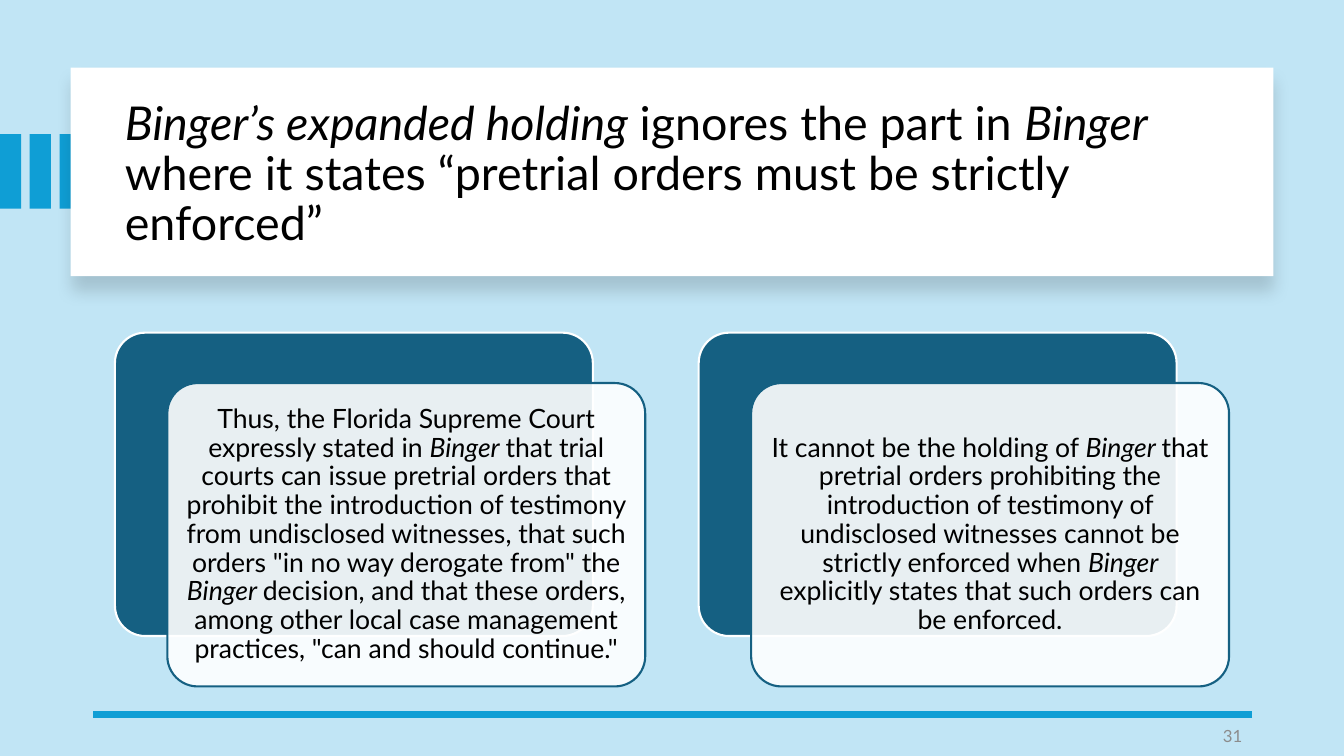
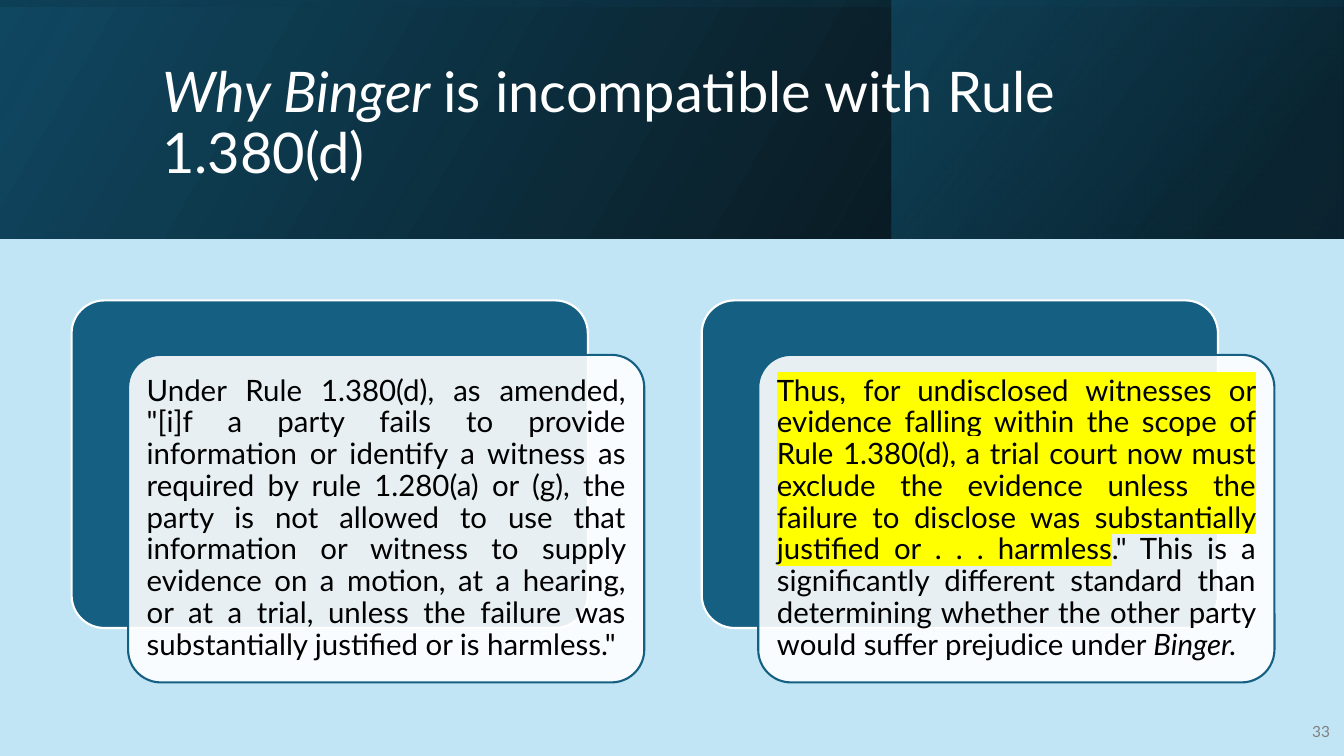
from lxml import etree
from pptx import Presentation
from pptx.dml.color import RGBColor
from pptx.enum.shapes import MSO_CONNECTOR, MSO_SHAPE
from pptx.enum.text import MSO_ANCHOR, PP_ALIGN
from pptx.oxml.ns import qn
from pptx.util import Inches, Pt

# Shared look
FONT = "Lato"
SKY, BLUE, TEAL = "C1E5F5", "0F9ED5", "156082"
WHITE, BLACK, YELLOW = "FFFFFF", "000000", "FFFF00"
ITALIC = {"italic": True}
MARKED = {"highlight": YELLOW}

# Content: text is a list of (words, format) runs; boxes are left, top, width, height
STRICT_ORDERS = {
    "title": [
        ("Binger’s expanded holding ", ITALIC),
        ("ignores the part in ", {}),
        ("Binger ", ITALIC),
        ("where it states “pretrial orders must be strictly enforced”", {}),
    ],
    "title_box": (1.14, 0.89, 11.13, 1.7),
    "title_style": {"size": 33.3, "color": BLACK},
    "number": "31",
    "number_box": (9.42, 7.1, 3, 0.4),
    "number_style": {"size": 12, "color": "8C8C8C"},
    "cards": [
        [
            ("Thus, the Florida Supreme Court expressly stated in ", {}),
            ("Binger ", ITALIC),
            ("that trial courts can issue pretrial orders that prohibit the "
             "introduction of testimony from undisclosed witnesses, that such "
             'orders "in no way derogate from" the ', {}),
            ("Binger ", ITALIC),
            ("decision, and that these orders, among other local case management "
             'practices, "can and should continue."', {}),
        ],
        [
            ("It cannot be the holding of ", {}),
            ("Binger ", ITALIC),
            ("that pretrial orders prohibiting the introduction of testimony of "
             "undisclosed witnesses cannot be strictly enforced when ", {}),
            ("Binger ", ITALIC),
            ("explicitly states that such orders can be enforced.", {}),
        ],
    ],
    "card_box": (1.14, 3.3, 4.74, 3.01),
    "card_pitch": 5.79,
    "card_offset": (0.52, 0.5),
    "card_inset": 0.08,
    "card_align": PP_ALIGN.CENTER,
    "card_style": {"size": 19, "color": BLACK},
}
RULE_CONFLICT = {
    "title": [("Why Binger ", ITALIC), ("is incompatible with Rule 1.380(d)", {})],
    "title_box": (1.51, 0.38, 10.63, 1.72),
    "title_style": {"size": 40, "color": WHITE},
    "number": "33",
    "number_box": (12.8, 7.06, 0.49, 0.4),
    "number_style": {"size": 11, "color": "808080"},
    "cards": [
        [
            ('Under Rule 1.380(d), as amended, "[i]f a party fails to provide '
             "information or identify a witness as required by rule 1.280(a) or "
             "(g), the party is not allowed to use that information or witness to "
             "supply evidence on a motion, at a hearing, or at a trial, unless the "
             'failure was substantially justified or is harmless."', {}),
        ],
        [
            ("Thus, for undisclosed witnesses or evidence falling within the scope "
             "of Rule 1.380(d), a trial court now must exclude the evidence unless "
             "the failure to disclose was substantially justified or . . . "
             "harmless", MARKED),
            ('." This is a significantly different standard than determining '
             "whether the other party would suffer prejudice under ", {}),
            ("Binger.", ITALIC),
        ],
    ],
    "card_box": (0.71, 2.98, 5.12, 3.25),
    "card_pitch": 6.25,
    "card_offset": (0.56, 0.54),
    "card_inset": 0.09,
    "card_align": PP_ALIGN.JUSTIFY,
    "card_style": {"size": 21, "color": BLACK},
}
# Header layers: box, rotation, angle, stops of (position, colour, opacity) in percent
HEADER_LAYERS = [
    ((0, 0, 13.33, 2.37), 0, 330, [(0, BLACK, 96), (100, "104862", 100)]),
    ((8.84, 0, 4.48, 2.37), 0, 320, [(19, "0B3041", 68), (100, TEAL, 48)]),
    ((5.48, -5.48, 2.37, 13.33), 270, 350, [(23, "104862", 16), (99, BLACK, 45)]),
]


def rgb(color):
    return RGBColor.from_string(color)


def inches(box):
    return [Inches(value) for value in box]


def add_node(parent, tag, **attributes):
    node = etree.SubElement(parent, qn(tag))
    for name, value in attributes.items():
        node.set(name, str(value))
    return node


def add_color(parent, color, opacity=100):
    node = add_node(parent, "a:srgbClr", val=color)
    if opacity < 100:
        add_node(node, "a:alpha", val=opacity * 1000)


# Shapes
def add_box(slide, kind, box, fill, line=None, opacity=100):
    shape = slide.shapes.add_shape(kind, *inches(box))
    shape.shadow.inherit = False
    shape.fill.solid()
    shape.fill.fore_color.rgb = rgb(fill)
    if opacity < 100:
        color = shape._element.spPr.find(".//" + qn("a:srgbClr"))
        add_node(color, "a:alpha", val=opacity * 1000)
    if line:
        shape.line.color.rgb = rgb(line)
        shape.line.width = Pt(1.5)
    else:
        shape.line.fill.background()
    return shape


def add_gradient_box(slide, box, rotation, angle, stops):
    shape = add_box(slide, MSO_SHAPE.RECTANGLE, box, BLACK)
    shape.rotation = rotation
    properties = shape._element.spPr
    properties.find(qn("a:xfrm")).set("flipH", "1")
    solid = properties.find(qn("a:solidFill"))
    gradient = etree.Element(qn("a:gradFill"), rotWithShape="1")
    stop_list = add_node(gradient, "a:gsLst")
    for position, color, opacity in stops:
        add_color(add_node(stop_list, "a:gs", pos=position * 1000), color, opacity)
    add_node(gradient, "a:lin", ang=angle * 60000, scaled=0)
    properties.replace(solid, gradient)


def add_soft_shadow(shape):
    effects = shape._element.spPr.find(qn("a:effectLst"))
    shadow = add_node(effects, "a:outerShdw", blurRad=Pt(11), dist=Pt(10),
                      dir=90 * 60000, algn="t", rotWithShape=0)
    add_color(shadow, BLACK, 15)


# Text
def write(shape, runs, style, align=PP_ALIGN.LEFT, spacing=0.9):
    frame = shape.text_frame
    frame.word_wrap = True
    frame.vertical_anchor = MSO_ANCHOR.MIDDLE
    paragraph = frame.paragraphs[0]
    paragraph.alignment = align
    paragraph.line_spacing = spacing
    for words, extra in runs:
        run = paragraph.add_run()
        run.text = words
        look = {**style, **extra}
        font_values = {"name": FONT, "size": Pt(look["size"]),
                       "italic": look.get("italic", False)}
        for name, value in font_values.items():
            setattr(run.font, name, value)
        run.font.color.rgb = rgb(look["color"])
        if "highlight" in look:
            highlight = etree.Element(qn("a:highlight"))
            add_color(highlight, look["highlight"])
            run.font._element.find(qn("a:solidFill")).addnext(highlight)


def add_text(slide, box, *text):
    write(slide.shapes.add_textbox(*inches(box)), *text)


# Slide parts
def draw_title_panel(slide):
    for index in range(3):
        add_box(slide, MSO_SHAPE.RECTANGLE, (index * 0.59 / 2, 1.33, 0.21, 0.74), BLUE)
    panel = add_box(slide, MSO_SHAPE.RECTANGLE, (0.7, 0.67, 11.93, 2.07), WHITE)
    add_soft_shadow(panel)
    rule = slide.shapes.add_connector(MSO_CONNECTOR.STRAIGHT,
                                      *inches((12.42, 7.09, 0.92, 7.09)))
    rule.line.color.rgb = rgb(BLUE)
    rule.line.width = Pt(4.5)
    add_node(rule._element.spPr, "a:effectLst")


def draw_header(slide):
    for layer in HEADER_LAYERS:
        add_gradient_box(slide, *layer)


def draw_cards(slide, content):
    left, top, width, height = content["card_box"]
    shift_x, shift_y = content["card_offset"]
    for index, runs in enumerate(content["cards"]):
        x = left + index * content["card_pitch"]
        back = add_box(slide, MSO_SHAPE.ROUNDED_RECTANGLE,
                       (x, top, width, height), TEAL, WHITE)
        front = add_box(slide, MSO_SHAPE.ROUNDED_RECTANGLE,
                        (x + shift_x, top + shift_y, width, height), WHITE, TEAL, 90)
        for card in (back, front):
            card.adjustments[0] = 0.1
        for side in ("left", "top", "right", "bottom"):
            setattr(front.text_frame, "margin_" + side, Inches(content["card_inset"]))
        write(front, runs, content["card_style"], content["card_align"])


def build_slide(presentation, content, draw_backdrop):
    slide = presentation.slides.add_slide(presentation.slide_layouts[6])
    draw_backdrop(slide)
    add_text(slide, content["title_box"], content["title"], content["title_style"])
    add_text(slide, content["number_box"], [(content["number"], {})],
             content["number_style"], PP_ALIGN.RIGHT, 1.0)
    draw_cards(slide, content)


def main():
    presentation = Presentation()
    presentation.slide_width = Inches(13.33)
    presentation.slide_height = Inches(7.5)
    background = presentation.slide_master.background.fill
    background.solid()
    background.fore_color.rgb = rgb(SKY)
    build_slide(presentation, STRICT_ORDERS, draw_title_panel)
    build_slide(presentation, RULE_CONFLICT, draw_header)
    presentation.save("out.pptx")


if __name__ == "__main__":
    main()
